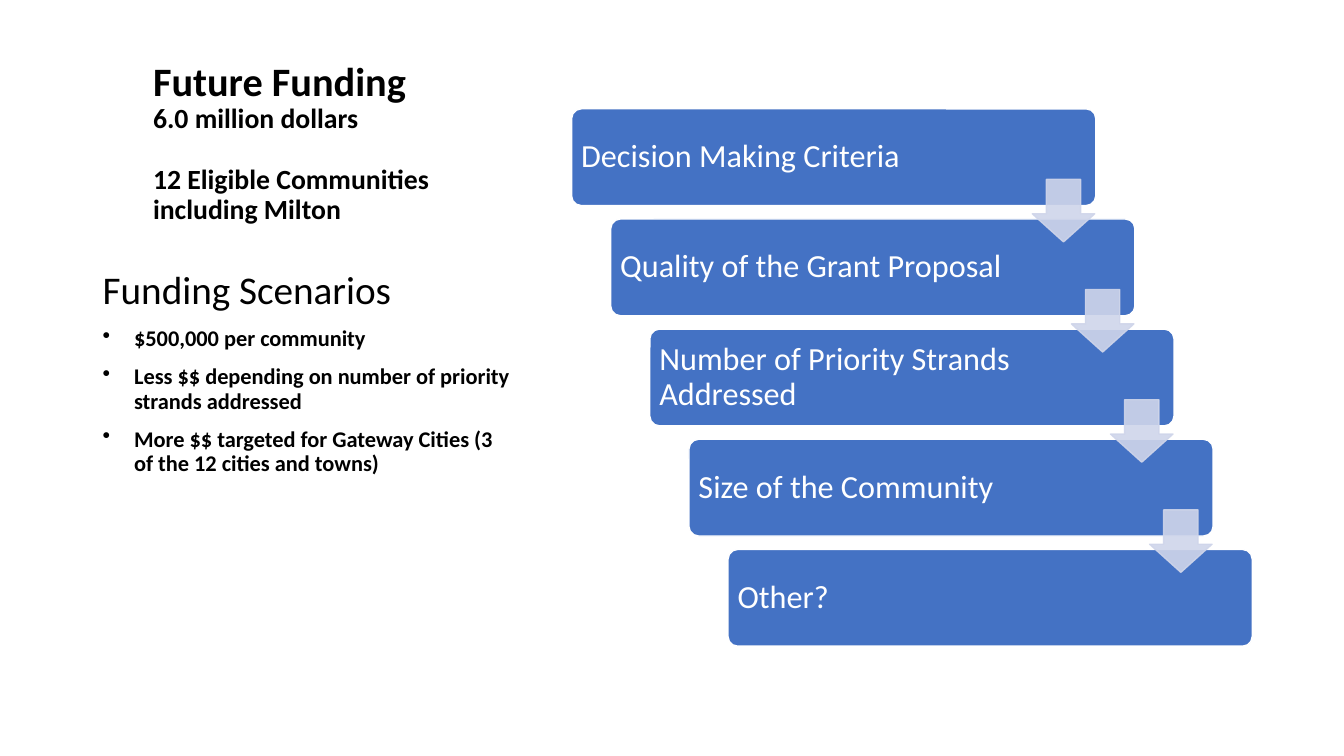
import dataclasses

import lxml.etree
import pptx
import pptx.dml.color
import pptx.enum.shapes
import pptx.enum.text
import pptx.oxml.ns
import pptx.util

SHAPES = pptx.enum.shapes.MSO_SHAPE
ANCHOR = pptx.enum.text.MSO_ANCHOR
ALIGN = pptx.enum.text.PP_ALIGN


@dataclasses.dataclass(frozen=True)
class Theme:
    font: str = "Calibri"
    ink: str = "000000"
    paper: str = "FFFFFF"
    step: str = "4472C4"
    arrow: str = "CFD5EA"
    arrow_opacity: int = 90
    title_size: float = 28.8
    subtitle_size: float = 19.8
    heading_size: float = 28
    bullet_size: float = 16
    step_size: float = 23


THEME = Theme()

# The grid has 100 columns and 100 rows
SLIDE_WIDTH = pptx.util.Inches(13.33)
SLIDE_HEIGHT = pptx.util.Inches(7.5)
COLUMN = SLIDE_WIDTH / 100
ROW = SLIDE_HEIGHT / 100

# Staircase of criteria: first step, step size and offset to the next step
STEP_LEFT, STEP_TOP = 42.53, 14.4
STEP_WIDTH, STEP_HEIGHT = 39, 12.8
STEP_RIGHT, STEP_DOWN = 2.91, 14.57
ARROW_WIDTH, ARROW_HEIGHT = 4.65, 8.27
ARROW_RIGHT, ARROW_DOWN = 34.28, 9.33

CRITERIA = [
    "Decision Making Criteria",
    "Quality of the Grant Proposal",
    "Number of Priority Strands Addressed",
    "Size of the Community",
    "Other?",
]
SCENARIOS = [
    "$500,000 per community",
    "Less $$ depending on number of priority strands addressed",
    "More $$ targeted for Gateway Cities (3 of the 12 cities and towns)",
]


def grid_box(left, top, width, height):
    return [round(left * COLUMN), round(top * ROW), round(width * COLUMN), round(height * ROW)]


def apply_format(target, values):
    for name, value in values.items():
        setattr(target, name, value)


def write_paragraph(frame, text, size, color, bold=False, before=0, indent=0, bullet=False):
    """Fill the frame's empty first paragraph, or add one after the others."""
    paragraph = frame.paragraphs[0] if not frame.text else frame.add_paragraph()
    apply_format(paragraph, {
        "alignment": ALIGN.LEFT,
        "line_spacing": 0.9,
        "space_before": pptx.util.Pt(before),
    })
    run = paragraph.add_run()
    run.text = text
    apply_format(run.font, {"name": THEME.font, "size": pptx.util.Pt(size), "bold": bold})
    run.font.color.rgb = pptx.dml.color.RGBColor.from_string(color)

    properties = paragraph._p.get_or_add_pPr()
    properties.set("marL", str(round(indent * COLUMN)))
    if bullet:
        properties.set("indent", str(-round(indent * COLUMN)))
        mark = lxml.etree.SubElement(properties, pptx.oxml.ns.qn("a:buChar"))
        mark.set("char", "•")


def add_text_area(slide, box):
    frame = slide.shapes.add_textbox(*box).text_frame
    apply_format(frame, {"word_wrap": True, "vertical_anchor": ANCHOR.TOP})
    return frame


def add_block(slide, preset, box, adjustments, color, outline, opacity=100):
    block = slide.shapes.add_shape(preset, *box)
    block.shadow.inherit = False
    for index, value in enumerate(adjustments):
        block.adjustments[index] = value
    block.fill.solid()
    block.fill.fore_color.rgb = pptx.dml.color.RGBColor.from_string(color)
    block.line.color.rgb = pptx.dml.color.RGBColor.from_string(outline)
    block.line.width = pptx.util.Pt(1)
    if opacity < 100:
        for shade in block._element.spPr.iter(pptx.oxml.ns.qn("a:srgbClr")):
            alpha = lxml.etree.SubElement(shade, pptx.oxml.ns.qn("a:alpha"))
            alpha.set("val", str(opacity * 1000))
    return block


def add_funding_title(slide):
    title = add_text_area(slide, grid_box(6.9, 7.47, 32.78, 29.2))
    style = {"color": THEME.ink, "bold": True, "indent": 3.75}
    write_paragraph(title, "Future Funding", THEME.title_size, **style)
    write_paragraph(title, "6.0 million dollars", THEME.subtitle_size, **style)
    write_paragraph(title, "12 Eligible Communities including Milton",
                    THEME.subtitle_size, before=21.7, **style)


def add_scenarios(slide):
    scenarios = add_text_area(slide, grid_box(6.9, 35.2, 32.25, 50.4))
    write_paragraph(scenarios, "Funding Scenarios", THEME.heading_size, THEME.ink)
    for scenario in SCENARIOS:
        write_paragraph(scenarios, scenario, THEME.bullet_size, THEME.ink,
                        bold=True, before=10, indent=2.34, bullet=True)


def add_criterion(slide, level, criterion):
    box = grid_box(STEP_LEFT + level * STEP_RIGHT, STEP_TOP + level * STEP_DOWN,
                   STEP_WIDTH, STEP_HEIGHT)
    step = add_block(slide, SHAPES.ROUNDED_RECTANGLE, box, [0.1], THEME.step, THEME.paper)
    apply_format(step.text_frame, {
        "word_wrap": True,
        "vertical_anchor": ANCHOR.MIDDLE,
        "margin_left": round(0.5 * COLUMN),
        "margin_right": round(8 * COLUMN),
    })
    write_paragraph(step.text_frame, criterion, THEME.step_size, THEME.paper)


def add_step_arrow(slide, level):
    box = grid_box(STEP_LEFT + ARROW_RIGHT + level * STEP_RIGHT,
                   STEP_TOP + ARROW_DOWN + level * STEP_DOWN,
                   ARROW_WIDTH, ARROW_HEIGHT)
    # The first adjustment is the head, the second the shaft
    add_block(slide, SHAPES.DOWN_ARROW, box, [0.55, 0.45],
              THEME.arrow, THEME.arrow, THEME.arrow_opacity)


def main():
    presentation = pptx.Presentation()
    apply_format(presentation, {"slide_width": SLIDE_WIDTH, "slide_height": SLIDE_HEIGHT})
    slide = presentation.slides.add_slide(presentation.slide_layouts[6])

    # Left side: funding and its scenarios
    add_funding_title(slide)
    add_scenarios(slide)

    # Right side: steps first, so that the arrows lie over them
    for level, criterion in enumerate(CRITERIA):
        add_criterion(slide, level, criterion)
    for level in range(len(CRITERIA) - 1):
        add_step_arrow(slide, level)

    presentation.save("out.pptx")


if __name__ == "__main__":
    main()
